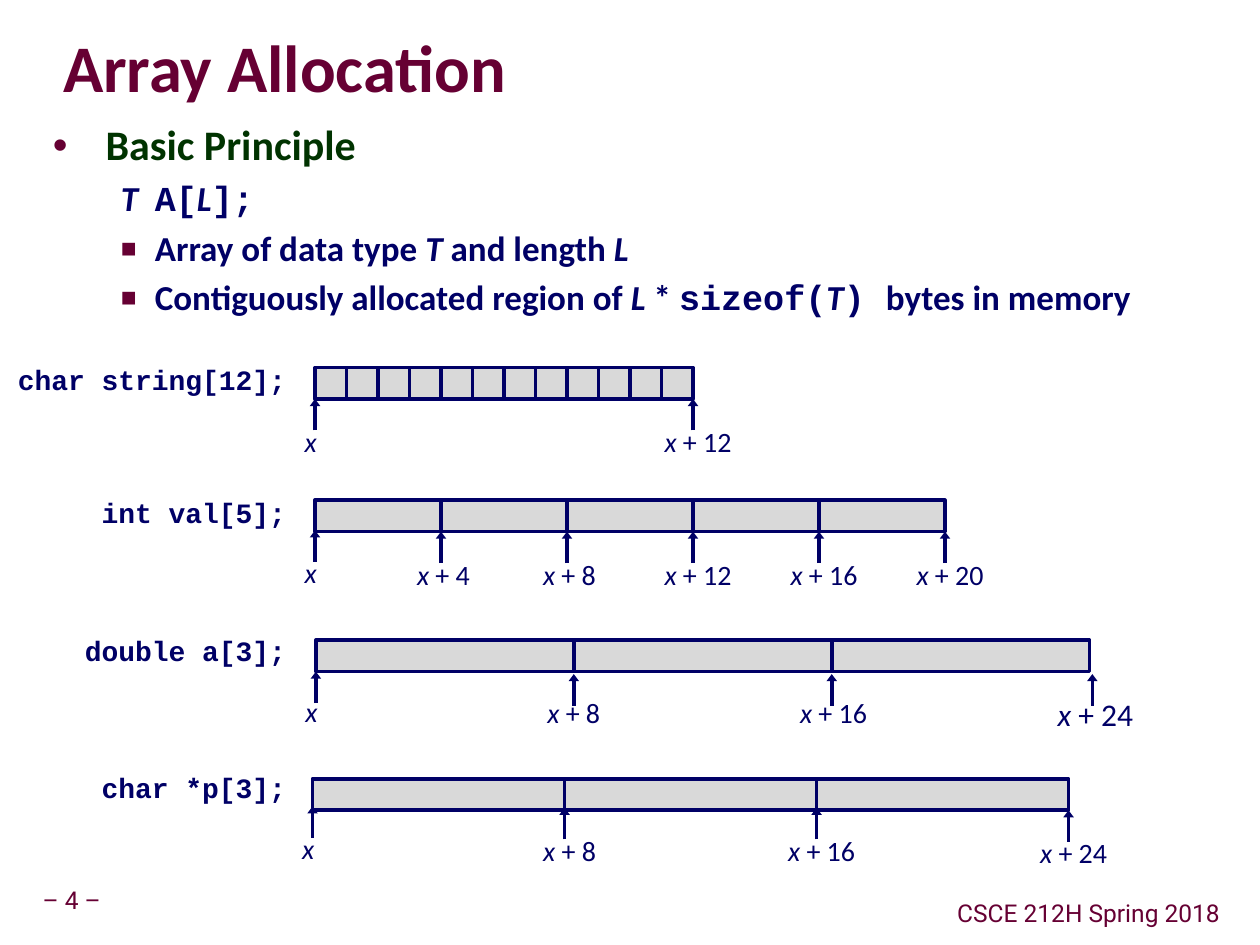
from collections import namedtuple

from lxml import etree
from pptx import Presentation
from pptx.dml.color import RGBColor
from pptx.enum.shapes import MSO_CONNECTOR, MSO_SHAPE
from pptx.enum.text import MSO_ANCHOR, MSO_AUTO_SIZE, PP_ALIGN
from pptx.oxml.ns import qn
from pptx.util import Pt

LEFT, CENTER, RIGHT = PP_ALIGN.LEFT, PP_ALIGN.CENTER, PP_ALIGN.RIGHT
TOP, MIDDLE = MSO_ANCHOR.TOP, MSO_ANCHOR.MIDDLE
RECTANGLE, STRAIGHT = MSO_SHAPE.RECTANGLE, MSO_CONNECTOR.STRAIGHT
FIXED = MSO_AUTO_SIZE.NONE

COLORS = {"maroon": "660033", "green": "003300", "navy": "000066",
          "cell": "D9D9D9", "shadow": "969696"}
SANS, CODE, FOOTER = "Calibri", "Courier New", "Roboto"

Run = namedtuple("Run", "text font italic", defaults=(SANS, False))
Mark = namedtuple("Mark", "edge arrow_drop label_shift label_drop")
Array = namedtuple("Array", "code code_top left top cell_width count item_bytes marks end_size end_shift",
                   defaults=(16, 0))

BODY = [
    ("", [Run("T\t", SANS, True), Run("A[", CODE), Run("L", SANS, True), Run("];", CODE)]),
    ("■", [Run("Array of data type "), Run("T", SANS, True),
           Run(" and length "), Run("L", SANS, True)]),
    ("■", [Run("Contiguously allocated region of "), Run("L", SANS, True), Run(" * "),
           Run("sizeof(", CODE), Run("T", SANS, True), Run(") ", CODE),
           Run("bytes in memory")]),
]

ARRAYS = [
    Array("char string[12];", 206, 180, 210, 18, 12, 1,
          [Mark(0, 18, -2.5, 31), Mark(12, 18, 2.9, 31)]),
    Array("int val[5];", 282, 180, 285.8, 72, 5, 4,
          [Mark(0, 17.3, -2.5, 30.3), Mark(1, 18, 1.4, 31.7), Mark(2, 18, 1.4, 31.7)]
          + [Mark(edge, 18, 2.9, 31.7) for edge in (3, 4, 5)]),
    Array("double a[3];", 360.7, 180.5, 365.8, 147.4, 3, 8,
          [Mark(0, 18, -2.5, 29.5), Mark(1, 19.4, 0, 30.2),
           Mark(2, 19.4, 1, 30.2), Mark(3, 19.4, 3.2, 30.2)], 18, 1.5),
    Array("char *p[3];", 439.2, 178.6, 445, 144, 3, 8,
          [Mark(0, 15.8, -2.5, 28.8), Mark(1, 16.6, 2.9, 30.2),
           Mark(2, 16.6, 2.9, 30.2), Mark(3, 18, 2.9, 31)]),
]


class SlideBuilder:
    def __init__(self, slide):
        self.slide = slide
        self.shapes = slide.shapes

    def color(self, name):
        return RGBColor.from_string(COLORS[name])

    def place(self, shape, left, top, width, height):
        shape.left, shape.top = Pt(left), Pt(top)
        shape.width, shape.height = Pt(width), Pt(height)

    def frame(self, shape, anchor, margins, wrap=True):
        frame = shape.text_frame
        frame.word_wrap, frame.auto_size, frame.vertical_anchor = wrap, FIXED, anchor
        frame.margin_left = frame.margin_right = Pt(margins[0])
        frame.margin_top = frame.margin_bottom = Pt(margins[1])
        return frame

    def runs(self, paragraph, runs, size, color, bold=False):
        for item in runs:
            run = paragraph.add_run()
            run.text = item.text
            font = run.font
            font.name, font.size = item.font, Pt(size)
            font.bold, font.italic = bold, item.italic
            font.color.rgb = self.color(color)

    def bullet(self, paragraph, symbol, margin, indent, percent=100):
        properties = paragraph._p.get_or_add_pPr()
        properties.set("marL", str(Pt(margin)))
        properties.set("indent", str(Pt(indent)))
        if not symbol:
            etree.SubElement(properties, qn("a:buNone"))
            return
        color = etree.SubElement(properties, qn("a:buClr"))
        etree.SubElement(color, qn("a:srgbClr"), val=COLORS["maroon"])
        etree.SubElement(properties, qn("a:buSzPct"), val=str(percent * 1000))
        etree.SubElement(properties, qn("a:buFont"), typeface="Arial")
        etree.SubElement(properties, qn("a:buChar"), char=symbol)

    def title(self, text):
        title = self.shapes.title
        self.place(title, 36, 18, 468, 45.4)
        paragraph = self.frame(title, MIDDLE, (0, 0)).paragraphs[0]
        paragraph.alignment, paragraph.line_spacing = LEFT, 0.87
        self.runs(paragraph, [Run(text)], 38, "maroon", True)
        effects = etree.Element(qn("a:effectLst"))
        shadow = etree.SubElement(effects, qn("a:outerShdw"), dist=str(Pt(3)), dir="2700000")
        etree.SubElement(shadow, qn("a:srgbClr"), val=COLORS["shadow"])
        paragraph.runs[0].font._element.find(qn("a:solidFill")).addnext(effects)

    def body(self, heading, items):
        body = self.slide.placeholders[1]
        self.place(body, 23, 66.2, 654.5, 127.4)
        frame = self.frame(body, TOP, (7.2, 3.6))
        paragraph = frame.paragraphs[0]
        self.bullet(paragraph, "•", 30.2, -30.2)
        paragraph.line_spacing, paragraph.space_before = 0.95, Pt(0)
        self.runs(paragraph, [Run(heading)], 24, "green", True)
        for symbol, runs in items:
            paragraph = frame.add_paragraph()
            paragraph.level = 1
            self.bullet(paragraph, symbol, 58.3, -19.4, 75)
            paragraph.line_spacing, paragraph.space_before = 0.95, Pt(5.5)
            self.runs(paragraph, runs, 20, "navy", True)

    def text(self, shapes, box, runs, size, color, alignment=CENTER, anchor=TOP,
             margins=(7.2, 3.6), wrap=True, bold=False):
        shape = shapes.add_textbox(*(Pt(length) for length in box))
        paragraph = self.frame(shape, anchor, margins, wrap).paragraphs[0]
        paragraph.alignment, paragraph.line_spacing = alignment, 0.9
        self.runs(paragraph, runs, size, color, bold)

    def footer(self, text, left, top, width):
        self.text(self.shapes, (left, top, width, 22.3), [Run(text, FOOTER)], 14, "maroon",
                  anchor=MIDDLE, margins=(3.6, 3.6), wrap=False)

    def cell(self, shapes, left, top, width):
        shape = shapes.add_shape(RECTANGLE, Pt(left), Pt(top), Pt(width), Pt(18))
        shape.shadow.inherit = False
        shape.fill.solid()
        shape.fill.fore_color.rgb = self.color("cell")
        shape.line.color.rgb = self.color("navy")
        shape.line.width = Pt(2)

    def arrow(self, shapes, left, top):
        connector = shapes.add_connector(STRAIGHT, Pt(left), Pt(top + 18), Pt(left), Pt(top))
        connector.line.color.rgb = self.color("navy")
        connector.line.width = Pt(2)
        properties = connector._element.spPr
        etree.SubElement(properties.find(qn("a:ln")), qn("a:tailEnd"),
                         type="triangle", w="med", len="sm")
        etree.SubElement(properties, qn("a:effectLst"))

    def array(self, array):
        code_width = len(array.code) * 9.6 + 14.4
        self.text(self.shapes, (170.5 - code_width, array.code_top, code_width, 26.6),
                  [Run(array.code, CODE)], 16, "navy", RIGHT, wrap=False, bold=True)
        shapes = self.shapes.add_group_shape().shapes
        for index in range(array.count):
            self.cell(shapes, array.left + index * array.cell_width, array.top, array.cell_width)
        for mark in array.marks:
            is_end = mark.edge == array.count
            edge_left = array.left + mark.edge * array.cell_width
            self.arrow(shapes, edge_left + (array.end_shift if is_end else 0),
                       array.top + mark.arrow_drop)
            runs, width = [Run("x", SANS, True)], 31
            if mark.edge:
                runs = [Run("x ", SANS, True), Run(f"+ {mark.edge * array.item_bytes}")]
                width = 78
            box = (edge_left + mark.label_shift - width / 2, array.top + mark.label_drop, width, 26.6)
            self.text(shapes, box, runs, array.end_size if is_end else 16, "navy")


def main():
    presentation = Presentation()
    presentation.slide_width, presentation.slide_height = Pt(720), Pt(540)
    builder = SlideBuilder(presentation.slides.add_slide(presentation.slide_layouts[1]))
    builder.footer("– 4 –", 17.3, 504, 47.5)
    builder.footer("CSCE 212H Spring 2018", 540, 511.2, 164.2)
    builder.title("Array Allocation")
    builder.body("Basic Principle", BODY)
    for array in ARRAYS:
        builder.array(array)
    presentation.save("out.pptx")


if __name__ == "__main__":
    main()
